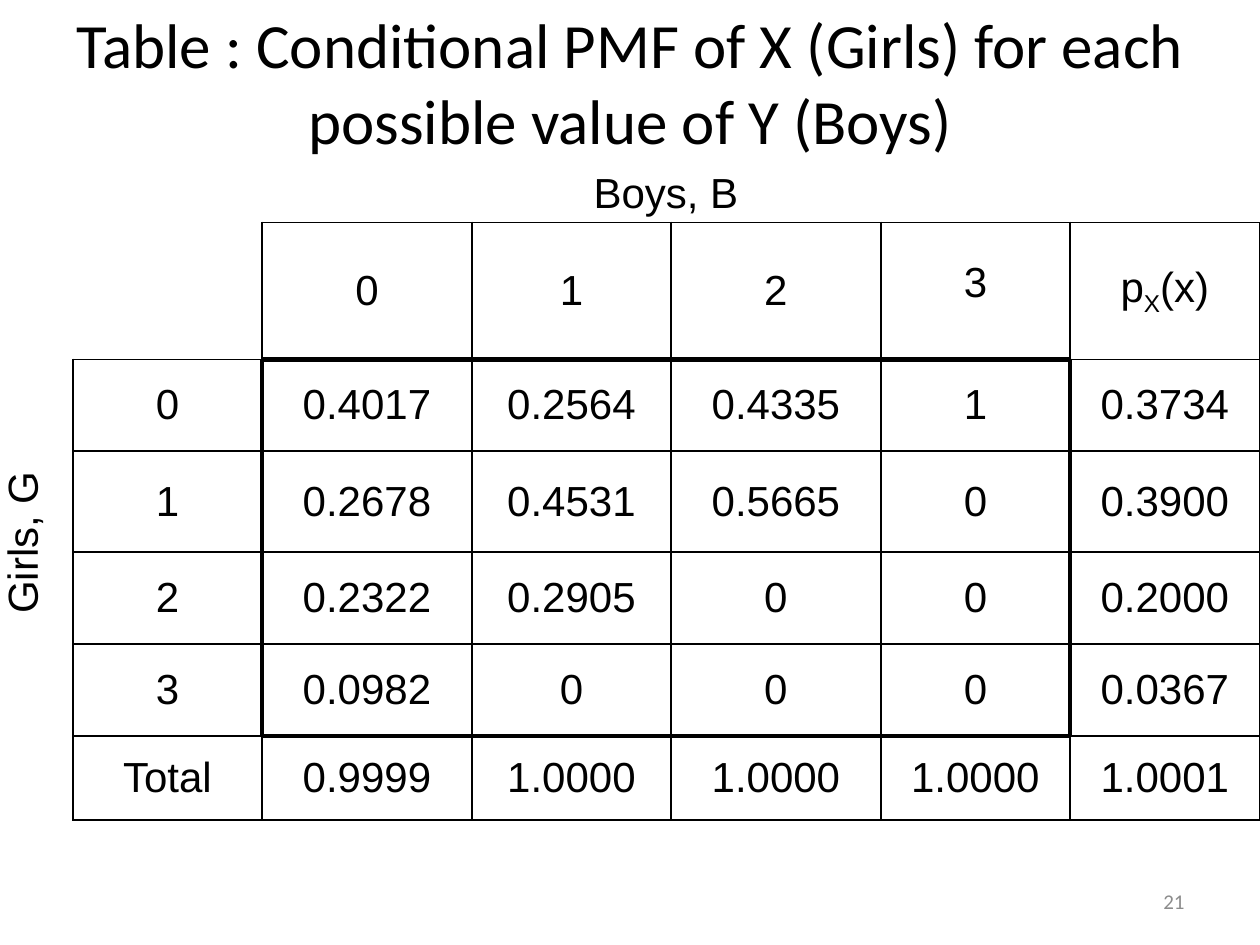
from lxml.etree import SubElement
from pptx import Presentation
from pptx.dml.color import RGBColor
from pptx.enum.text import MSO_ANCHOR, MSO_AUTO_SIZE, PP_ALIGN
from pptx.oxml.ns import qn
from pptx.util import Emu, Pt

BLACK = RGBColor(0, 0, 0)
GRAY = RGBColor(0x8C, 0x8C, 0x8C)
PX = 914400 / 126

COLS = [73, 189, 210, 199, 210, 189, 190]
ROWS = [45, 137, 92, 101, 92, 92, 84]
CELLS = [
    ["", "", "Boys, B", "", "", "", ""],
    ["", "", "0", "1", "2", "3", ""],
    ["Girls, G", "0", "0.4017", "0.2564", "0.4335", "1", "0.3734"],
    ["", "1", "0.2678", "0.4531", "0.5665", "0", "0.3900"],
    ["", "2", "0.2322", "0.2905", "0", "0", "0.2000"],
    ["", "3", "0.0982", "0", "0", "0", "0.0367"],
    ["", "Total", "0.9999", "1.0000", "1.0000", "1.0000", "1.0001"],
]


def px(n):
    return Emu(round(n * PX))


def in_grid(row, col):
    return 1 <= row <= 6 and 1 <= col <= 6 and (row, col) != (1, 1)


def in_core(row, col):
    return 2 <= row <= 5 and 2 <= col <= 5


def edge_width(a, b):
    """Points of the line between two neighbouring cells."""
    if not (in_grid(*a) or in_grid(*b)):
        return 0
    return 3 if in_core(*a) != in_core(*b) else 1


class SlideBuilder:
    def __init__(self, slide):
        self.slide = slide
        self.body_font = "Arial"
        self.title_font = "Calibri"

    def add_run(self, p, text, size, font, color=BLACK):
        r = p.add_run()
        r.text = text
        r.font.size, r.font.name = Pt(size), font
        r.font.color.rgb = color
        return r

    def put_text(self, sp, box, text, size, align, color=BLACK):
        sp.left, sp.top, sp.width, sp.height = map(px, box)
        tf = sp.text_frame
        tf.word_wrap = True
        tf.auto_size = MSO_AUTO_SIZE.NONE
        tf.vertical_anchor = MSO_ANCHOR.MIDDLE
        p = tf.paragraphs[0]
        p.alignment = align
        self.add_run(p, text, size, self.title_font, color)

    def title(self, box, text):
        self.put_text(self.slide.shapes.title, box, text, 36, PP_ALIGN.CENTER)

    def page_number(self, box, text):
        sp = self.slide.shapes.add_textbox(*map(px, box))
        self.put_text(sp, box, text, 12, PP_ALIGN.RIGHT, GRAY)

    def table(self, left, top):
        sp = self.slide.shapes.add_table(
            len(ROWS), len(COLS), px(left), px(top), px(sum(COLS)), px(sum(ROWS)))
        table = sp.table
        table.first_row = table.horz_banding = False
        for column, width in zip(table.columns, COLS):
            column.width = px(width)
        for row, height in zip(table.rows, ROWS):
            row.height = px(height)
        for row, texts in enumerate(CELLS):
            for col, text in enumerate(texts):
                self.cell(table.cell(row, col), row, col, text)
        return table

    def cell(self, cell, row, col, text):
        cell.margin_left = cell.margin_right = px(9)
        cell.margin_top = cell.margin_bottom = 0
        cell.vertical_anchor = MSO_ANCHOR.MIDDLE if row else MSO_ANCHOR.TOP
        p = cell.text_frame.paragraphs[0]
        p.alignment = PP_ALIGN.CENTER
        p.font.size = Pt(24)
        if text:
            self.add_run(p, text, 24, self.body_font)
        self.borders(cell, row, col)
        cell.fill.background()

    def borders(self, cell, row, col):
        tcPr = cell._tc.get_or_add_tcPr()
        sides = [("a:lnL", 0, -1), ("a:lnR", 0, 1), ("a:lnT", -1, 0), ("a:lnB", 1, 0)]
        for tag, dr, dc in sides:
            width = edge_width((row, col), (row + dr, col + dc))
            ln = SubElement(tcPr, qn(tag), w=str(Pt(width)))
            if width:
                fill = SubElement(ln, qn("a:solidFill"))
                SubElement(fill, qn("a:srgbClr"), val=str(BLACK))
            else:
                SubElement(ln, qn("a:noFill"))


def main():
    prs = Presentation()
    prs.slide_width, prs.slide_height = px(1260), px(945)
    s = SlideBuilder(prs.slides.add_slide(prs.slide_layouts[5]))

    s.title((0, 42, 1260, 78),
            "Table : Conditional PMF of X (Girls) for each possible value of Y (Boys)")

    # Probability table with its two axis headings
    table = s.table(0, 171)
    table.cell(0, 2).merge(table.cell(0, 5))
    girls = table.cell(2, 0)
    girls.merge(table.cell(5, 0))
    girls._tc.get_or_add_tcPr().set("vert", "vert270")
    girls.text_frame.paragraphs[0]._p.get_or_add_pPr().set("marL", str(px(10)))

    # The last boys heading sits a little higher than the others
    last_boys = table.cell(1, 5)
    last_boys.vertical_anchor = MSO_ANCHOR.BOTTOM
    last_boys.margin_bottom = px(53)

    # Marginal heading with a subscript
    p = table.cell(1, 6).text_frame.paragraphs[0]
    for text, baseline in [("p", 0), ("X", -25000), ("(x)", 0)]:
        r = s.add_run(p, text, 24, s.body_font)
        if baseline:
            r.font._element.set("baseline", str(baseline))

    s.page_number((903, 876, 294, 50), "21")
    prs.save("out.pptx")


if __name__ == "__main__":
    main()
